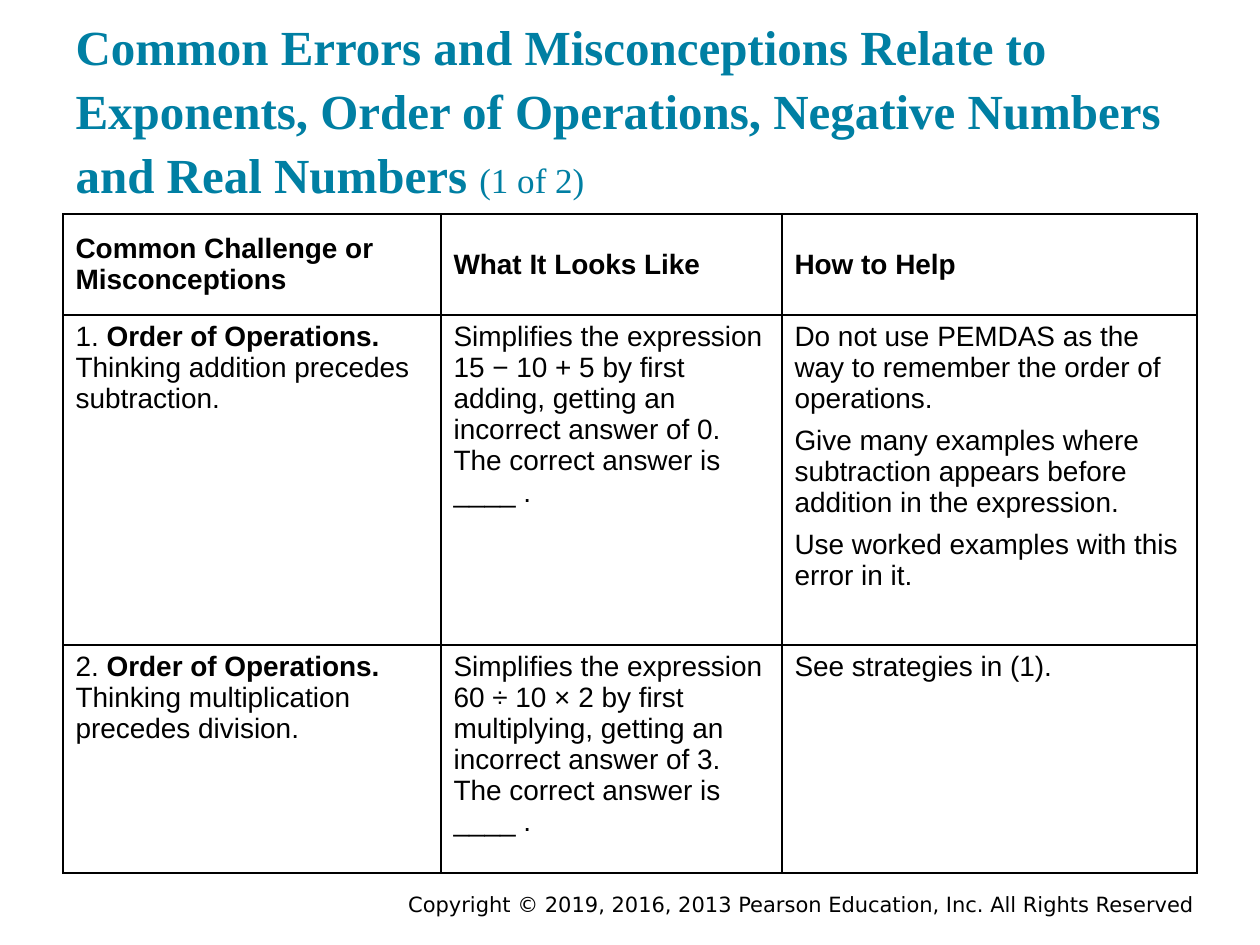
from lxml import etree
from pptx import Presentation
from pptx import util as u
from pptx.dml.color import RGBColor
from pptx.enum import text
from pptx.oxml.ns import qn

PX = 914400 / 126


def px(n):
    return u.Emu(round(n * PX))


def rgb(value):
    return RGBColor.from_string(value)


class Deck:
    """Holds the style and the current slide."""
    teal, black = "007FA3", "000000"
    title_font, body_font, footer_font = "Times New Roman", "Arial", "DejaVu Sans"

    def __init__(self, width, height):
        self.prs = Presentation()
        self.prs.slide_width, self.prs.slide_height = px(width), px(height)
        self.s = self.prs.slides.add_slide(self.prs.slide_layouts[5])

    def runs(self, p, parts, font, color):
        """Fill a paragraph from (text, size, bold) parts."""
        for words, size, bold in parts:
            r = p.add_run()
            r.text = words
            r.font.name, r.font.size, r.font.bold = font, u.Pt(size), bold
            r.font.color.rgb = rgb(color)

    def title(self, box, parts):
        sp = self.s.shapes.title
        sp.left, sp.top, sp.width, sp.height = map(px, box)
        tf = sp.text_frame
        tf.word_wrap = True
        tf.auto_size = text.MSO_AUTO_SIZE.NONE
        tf.vertical_anchor = text.MSO_ANCHOR.MIDDLE
        tf.margin_left = tf.margin_right = tf.margin_top = tf.margin_bottom = u.Inches(0.1)
        p = tf.paragraphs[0]
        p.alignment = text.PP_ALIGN.LEFT
        p.line_spacing = 1.09
        self.runs(p, parts, self.title_font, self.teal)

    def footer(self, box, words):
        tf = self.s.shapes.add_textbox(*map(px, box)).text_frame
        tf.word_wrap = True
        tf.vertical_anchor = text.MSO_ANCHOR.MIDDLE
        p = tf.paragraphs[0]
        p.alignment = text.PP_ALIGN.RIGHT
        self.runs(p, [(words, 12, False)], self.footer_font, self.black)

    def borders(self, cell):
        tcPr = cell._tc.get_or_add_tcPr()
        for i, side in enumerate(("lnL", "lnR", "lnT", "lnB")):
            ln = etree.Element(qn(f"a:{side}"), w=str(u.Pt(1)))
            fill = etree.SubElement(ln, qn("a:solidFill"))
            etree.SubElement(fill, qn("a:srgbClr"), val=self.black)
            tcPr.insert(i, ln)

    def cell(self, cell, paragraphs, header):
        """Each paragraph is a list of (text, bold) parts."""
        cell.fill.background()
        self.borders(cell)
        cell.vertical_anchor = text.MSO_ANCHOR.MIDDLE if header else text.MSO_ANCHOR.TOP
        tf = cell.text_frame
        for i, parts in enumerate(paragraphs):
            p = tf.add_paragraph() if i else tf.paragraphs[0]
            if i and not header:
                p.space_before = u.Pt(6)
            self.runs(p, [(words, 16, bold) for words, bold in parts],
                      self.body_font, self.black)

    def table(self, left, top, widths, heights, rows):
        box = left, top, sum(widths), sum(heights)
        table = self.s.shapes.add_table(len(rows), len(widths), *map(px, box)).table
        table.horz_banding = False
        for column, width in zip(table.columns, widths):
            column.width = px(width)
        for i, (row, height, contents) in enumerate(zip(table.rows, heights, rows)):
            row.height = px(height)
            for cell, paragraphs in zip(row.cells, contents):
                self.cell(cell, paragraphs, header=i == 0)


def paragraphs(*lines, bold=False):
    return [[(line, bold)] for line in lines]


def challenge(number, words):
    return [[(f"{number}. ", False), ("Order of Operations. ", True), (words, False)]]


def looks_like(expression, action, answer):
    return paragraphs(f"Simplifies the expression {expression} by first {action}, getting an "
                      f"incorrect answer of {answer}. The correct answer is ____ .")


def main():
    deck = Deck(1260, 945)
    deck.footer((368, 888, 839, 32),
                "Copyright © 2019, 2016, 2013 Pearson Education, Inc. All Rights Reserved")
    deck.title((63, 32, 1134, 151), [
        ("Common Errors and Misconceptions Relate to Exponents, Order of Operations, "
         "Negative Numbers and Real Numbers ", 28, True),
        ("(1 of 2)", 20, False)])
    rows = [
        [paragraphs("Common Challenge or", "Misconceptions", bold=True),
         paragraphs("What It Looks Like", bold=True),
         paragraphs("How to Help", bold=True)],
        [challenge(1, "Thinking addition precedes subtraction."),
         looks_like("15 − 10 + 5", "adding", 0),
         paragraphs("Do not use PEMDAS as the way to remember the order of operations.",
                    "Give many examples where subtraction appears before addition "
                    "in the expression.",
                    "Use worked examples with this error in it.")],
        [challenge(2, "Thinking multiplication precedes division."),
         looks_like("60 ÷ 10 × 2", "multiplying", 3),
         paragraphs("See strategies in (1).")],
    ]
    deck.table(63, 214, (378, 341, 415), (101, 330, 228), rows)
    deck.prs.save("out.pptx")


if __name__ == "__main__":
    main()
